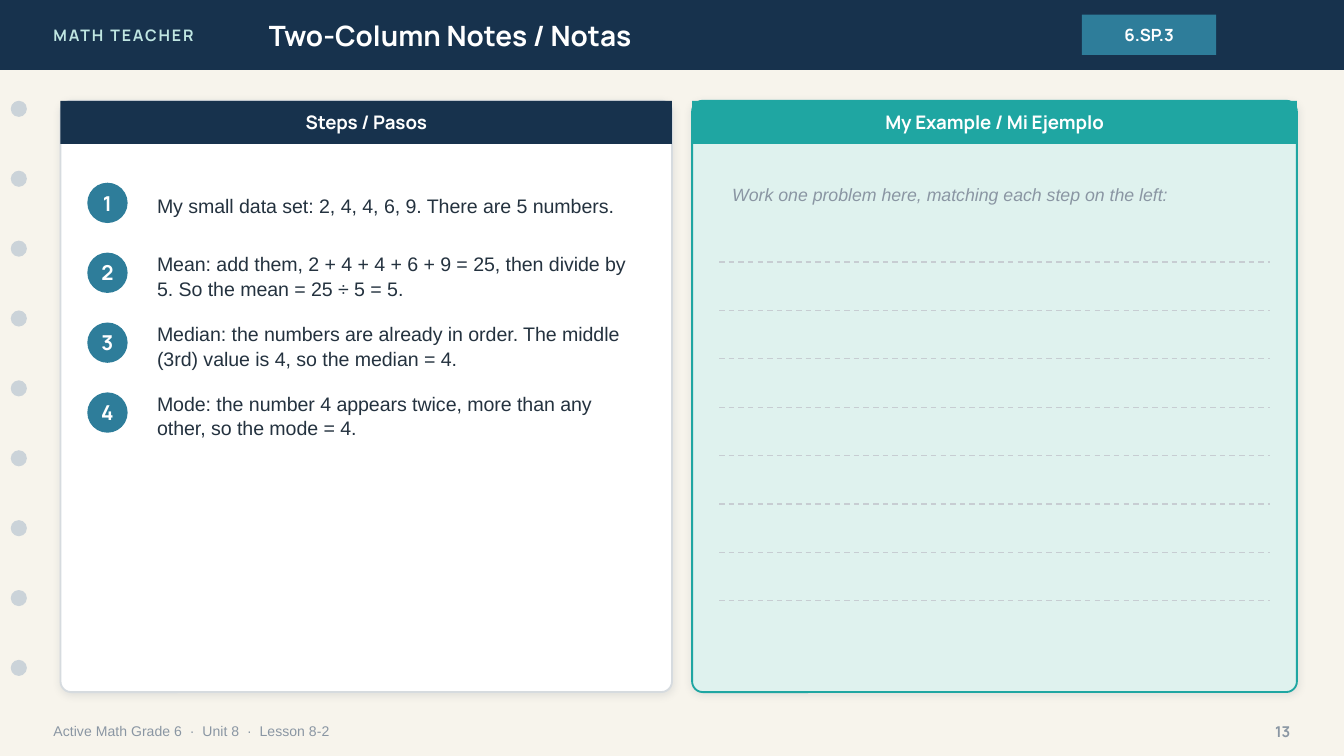
from lxml import etree
from pptx import Presentation
from pptx.dml.color import RGBColor
from pptx.enum.dml import MSO_LINE
from pptx.enum.shapes import MSO_CONNECTOR, MSO_SHAPE
from pptx.enum.text import MSO_ANCHOR, MSO_AUTO_SIZE, PP_ALIGN
from pptx.oxml.ns import qn
from pptx.util import Pt

RECT, ROUND, OVAL = MSO_SHAPE.RECTANGLE, MSO_SHAPE.ROUNDED_RECTANGLE, MSO_SHAPE.OVAL
LEFT, CENTER, RIGHT = PP_ALIGN.LEFT, PP_ALIGN.CENTER, PP_ALIGN.RIGHT
MIDDLE, NO_FIT = MSO_ANCHOR.MIDDLE, MSO_AUTO_SIZE.NONE
STRAIGHT, DASH = MSO_CONNECTOR.STRAIGHT, MSO_LINE.DASH
HEAD, BODY = "Manrope", "Arial"
COLORS = {
    "paper": "F7F4EC", "navy": "17324D", "mint": "BFE6E2", "white": "FFFFFF",
    "blue": "2E7D9A", "hole": "CBD3D9", "muted": "8A96A3", "border": "D6DBDF",
    "ink": "24323F", "teal": "1FA6A2", "pale": "DFF2EE", "rule": "C7CDD2",
    "shadow": "1C2E42",
}
BAR_H = 37.44
ROW_STEP = 37.44
CARD_TOP, CARD_H, HEADER_H = 54, 316.8, 23.04
STEPS = [
    "My small data set: 2, 4, 4, 6, 9. There are 5 numbers.",
    "Mean: add them, 2 + 4 + 4 + 6 + 9 = 25, then divide by 5. So the mean = 25 ÷ 5 = 5.",
    "Median: the numbers are already in order. The middle (3rd) value is 4, so the median = 4.",
    "Mode: the number 4 appears twice, more than any other, so the mode = 4.",
]


def rgb(name):
    return RGBColor.from_string(COLORS[name])


def write(s, text, size=10, font=HEAD, color="white", bold=False, italic=False,
          align=LEFT, tracking=0, spacing=None, inset=None):
    tf = s.text_frame
    tf.word_wrap = True
    tf.auto_size = NO_FIT
    tf.vertical_anchor = MIDDLE
    if inset is not None:
        tf.margin_left = tf.margin_right = tf.margin_top = tf.margin_bottom = Pt(inset)
    p = tf.paragraphs[0]
    p.alignment = align
    if spacing:
        p.line_spacing = spacing
    r = p.add_run()
    r.text = text
    r.font.size, r.font.name = Pt(size), font
    r.font.bold, r.font.italic = bold, italic
    r.font.color.rgb = rgb(color)
    if tracking:
        r.font._element.set("spc", str(tracking * 100))


class NotesSlide:
    def __init__(self, prs):
        self.slide = prs.slides.add_slide(prs.slide_layouts[5])
        self.shapes = self.slide.shapes
        fill = self.slide.background.fill
        fill.solid()
        fill.fore_color.rgb = rgb("paper")

    def shape(self, kind, x, y, w, h, fill, line=None):
        s = self.shapes.add_shape(kind, Pt(x), Pt(y), Pt(w), Pt(h))
        s.shadow.inherit = False
        s.fill.solid()
        s.fill.fore_color.rgb = rgb(fill)
        if line:
            s.line.color.rgb = rgb(line)
            s.line.width = Pt(1)
        else:
            s.line.fill.background()
        return s

    def text(self, text, x, y, w, h, **style):
        s = self.shapes.add_textbox(Pt(x), Pt(y), Pt(w), Pt(h))
        write(s, text, **style)

    def title(self, text, x, y, w, h, **style):
        s = self.shapes.title
        s.left, s.top, s.width, s.height = Pt(x), Pt(y), Pt(w), Pt(h)
        write(s, text, **style)
        self.shapes._spTree.append(s._element)

    def card(self, heading, x, w, fill, line, header):
        s = self.shape(ROUND, x, CARD_TOP, w, CARD_H, fill, line)
        s.adjustments[0] = 0.018
        effects = s._element.spPr.find(qn("a:effectLst"))
        shadow = etree.SubElement(effects, qn("a:outerShdw"), blurRad=str(Pt(4)),
                                  dist=str(Pt(1)), dir="5400000", rotWithShape="0")
        color = etree.SubElement(shadow, qn("a:srgbClr"), val=COLORS["shadow"])
        etree.SubElement(color, qn("a:alpha"), val="10000")
        s = self.shape(RECT, x, CARD_TOP, w, HEADER_H, header)
        write(s, heading, bold=True, align=CENTER)

    def step(self, number, text, y):
        s = self.shape(OVAL, 46.8, y, 21.6, 21.6, "blue")
        write(s, str(number), size=11, bold=True, align=CENTER, inset=0)
        self.text(text, 77.04, y - 4.32, 272.16, 33.12, size=10.5, font=BODY,
                  color="ink", spacing=1.05)

    def writing_line(self, x1, x2, y):
        s = self.shapes.add_connector(STRAIGHT, Pt(x1), Pt(y), Pt(x2), Pt(y))
        s.line.color.rgb = rgb("rule")
        s.line.width = Pt(0.75)
        s.line.dash_style = DASH
        etree.SubElement(s._element.spPr, qn("a:effectLst"))


def main():
    prs = Presentation()
    prs.slide_width, prs.slide_height = Pt(720), Pt(405)
    notes = NotesSlide(prs)

    notes.shape(RECT, 0, 0, 720, BAR_H, "navy")
    notes.text("MATH TEACHER", 21.6, 0, 172.8, BAR_H, size=8.5, color="mint",
               bold=True, tracking=1)
    notes.title("Two-Column Notes / Notas", 136.8, 0, 403.2, BAR_H, size=15, bold=True)
    tag = notes.shape(RECT, 579.6, 7.92, 72, 21.6, "blue")
    write(tag, "6.SP.3", size=9, bold=True, align=CENTER)

    for i in range(9):
        notes.shape(OVAL, 5.76, CARD_TOP + i * ROW_STEP, 8.64, 8.64, "hole")

    notes.text("Active Math Grade 6  ·  Unit 8  ·  Lesson 8-2", 21.6, 381.6, 504, 20.16,
               size=7.5, font=BODY, color="muted")
    notes.text("13", 662.4, 381.6, 36, 20.16, size=8, color="muted", bold=True, align=RIGHT)

    notes.card("Steps / Pasos", 32.4, 327.6, "white", "border", "navy")
    for i, text in enumerate(STEPS):
        notes.step(i + 1, text, 97.92 + i * ROW_STEP)

    notes.card("My Example / Mi Ejemplo", 370.8, 324, "pale", "teal", "teal")
    notes.text("Work one problem here, matching each step on the left:", 385.2, 90, 295.2, 28.8,
               size=9.5, font=BODY, color="muted", italic=True)
    for i in range(8):
        notes.writing_line(385.2, 680.4, 140.4 + i * 25.92)

    prs.save("out.pptx")


if __name__ == "__main__":
    main()
